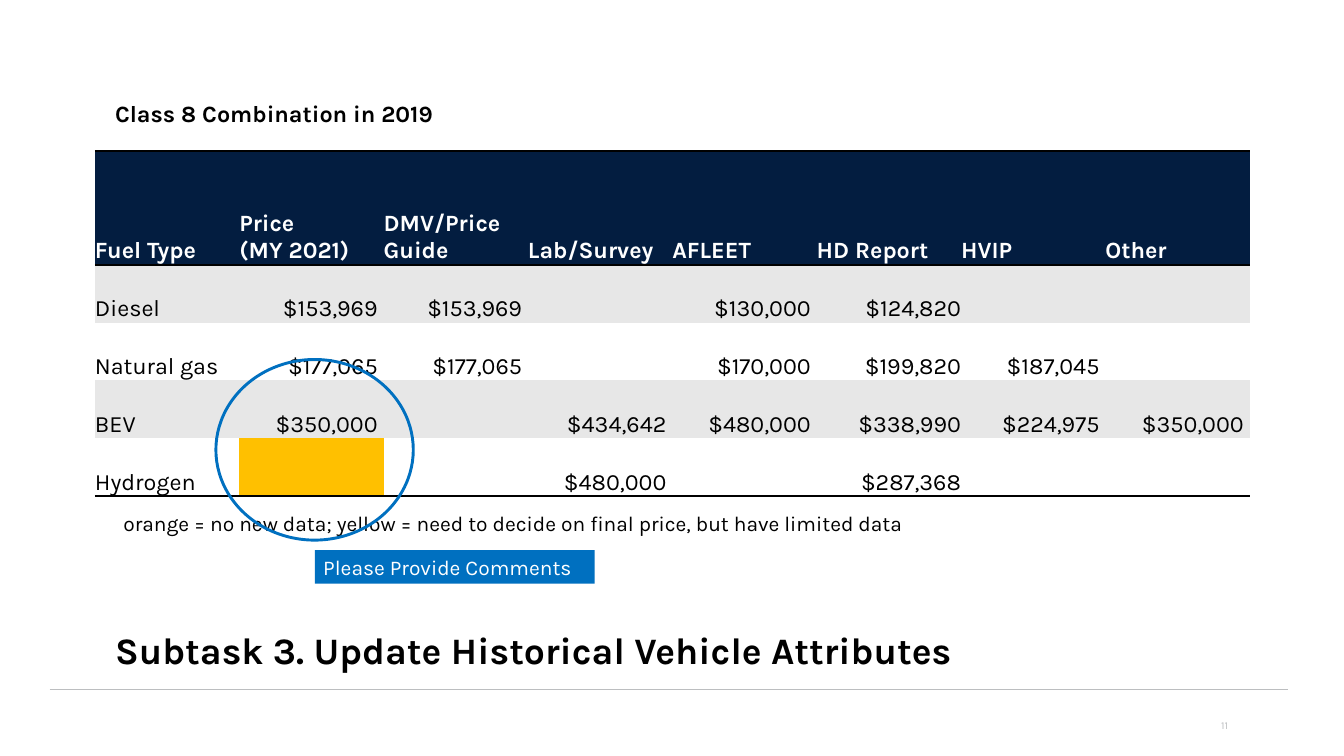
import pptx
import pptx.util
from pptx.dml.color import RGBColor
from pptx.enum.shapes import MSO_CONNECTOR, MSO_SHAPE
from pptx.enum.text import MSO_ANCHOR, PP_ALIGN
from pptx.oxml import parse_xml
from pptx.oxml.ns import nsdecls, qn

WIDTH, HEIGHT = pptx.util.Inches(16), pptx.util.Inches(9)
COL, ROW = WIDTH // 16, HEIGHT // 9
LEFT, CONTENT_W = 1.37, 13.75
FONT = "Karla"
NO_STYLE_NO_GRID = "{2D5ABB26-0587-4C30-8999-92F81FD0307C}"

BLACK = RGBColor(0x00, 0x00, 0x00)
WHITE = RGBColor(0xFF, 0xFF, 0xFF)
NAVY = RGBColor(0x03, 0x1D, 0x40)
BAND = RGBColor(0xE7, 0xE7, 0xE7)
AMBER = RGBColor(0xFF, 0xC0, 0x00)
BLUE = RGBColor(0x00, 0x70, 0xC0)
SILVER = RGBColor(0xBC, 0xBE, 0xC0)

HEADERS = ["Fuel Type", "Price\n(MY 2021)", "DMV/Price Guide", "Lab/Survey",
           "AFLEET", "HD Report", "HVIP", "Other"]
FLUSH_COLUMN = HEADERS.index("HD Report")
PRICES = [
    ["Diesel", "$153,969", "$153,969", "", "$130,000", "$124,820", "", ""],
    ["Natural gas", "$177,065", "$177,065", "", "$170,000", "$199,820", "$187,045", ""],
    ["BEV", "$350,000", "", "$434,642", "$480,000", "$338,990", "$224,975", "$350,000"],
    ["Hydrogen", "", "", "$480,000", "", "$287,368", "", ""],
]
UNDECIDED = (len(PRICES), 1)


def grid(*cells):
    """Turn left, top, width, height in grid columns and rows into lengths."""
    return [round(n * unit) for n, unit in zip(cells, (COL, ROW, COL, ROW))]


def write(tf, text, size, color=BLACK, bold=False, align=PP_ALIGN.LEFT, spacing=None):
    tf.word_wrap = True
    for i, line in enumerate(text.split("\n")):
        p = tf.add_paragraph() if i else tf.paragraphs[0]
        p.alignment = align
        if spacing:
            p.line_spacing = spacing
        r = p.add_run()
        r.text = line
        r.font.name, r.font.size, r.font.bold = FONT, pptx.util.Pt(size), bold
        r.font.color.rgb = color


def set_title(s, text):
    title = s.shapes.title
    title.left, title.top, title.width, title.height = grid(LEFT, 6.98, CONTENT_W, 1.08)
    tf = title.text_frame
    tf.margin_left = tf.margin_right = 0
    tf.vertical_anchor = MSO_ANCHOR.BOTTOM
    write(tf, text, 32, bold=True, spacing=0.9)


def add_text(s, cells, text, size, inset=0.1, anchor=MSO_ANCHOR.TOP, **style):
    tf = s.shapes.add_textbox(*grid(*cells)).text_frame
    tf.margin_left = tf.margin_right = pptx.util.Inches(inset)
    tf.vertical_anchor = anchor
    write(tf, text, size, **style)


def add_shape(s, kind, cells, fill=None, line=None):
    sp = s.shapes.add_shape(kind, *grid(*cells))
    sp.shadow.inherit = False
    if fill is None:
        sp.fill.background()
    else:
        sp.fill.solid()
        sp.fill.fore_color.rgb = fill
    if line is None:
        sp.line.fill.background()
    else:
        sp.line.color.rgb = line
        sp.line.width = pptx.util.Pt(2.5)
    return sp


def add_rule(s, x1, x2, y):
    c = s.shapes.add_connector(MSO_CONNECTOR.STRAIGHT, *grid(x1, y, x2, y))
    c.line.color.rgb = SILVER
    c.line.width = pptx.util.Pt(0.5)
    c._element.spPr.append(parse_xml(f"<a:effectLst {nsdecls('a')}/>"))


def add_border(cell, side):
    """Draw a 2 pt black border on side T or B; call before filling the cell."""
    cell._tc.get_or_add_tcPr().append(parse_xml(
        f'<a:ln{side} {nsdecls("a")} w="{pptx.util.Pt(2)}"><a:solidFill>'
        f'<a:srgbClr val="{BLACK}"/></a:solidFill></a:ln{side}>'))


def format_cell(cell, row, col, text):
    header = row == 0
    if header:
        add_border(cell, "T")
    if header or row == len(PRICES):
        add_border(cell, "B")
    cell.fill.solid()
    if (row, col) == UNDECIDED:
        cell.fill.fore_color.rgb = AMBER
    else:
        cell.fill.fore_color.rgb = NAVY if header else BAND if row % 2 else WHITE
    cell.vertical_anchor = MSO_ANCHOR.BOTTOM
    cell.margin_left = cell.margin_right = cell.margin_top = cell.margin_bottom = 0
    is_price = not header and col > 0
    if is_price and col != FLUSH_COLUMN:
        cell.margin_right = pptx.util.Inches(0.07)
    if text:
        write(cell.text_frame, text, 20, WHITE if header else BLACK, header,
              PP_ALIGN.RIGHT if is_price else PP_ALIGN.LEFT)


def add_price_table(s):
    rows = [HEADERS] + PRICES
    table = s.shapes.add_table(len(rows), len(HEADERS),
                               *grid(1.13, 1.8, CONTENT_W, 4.1)).table
    table.first_row = table.horz_banding = False
    table._tbl.tblPr.find(qn("a:tableStyleId")).text = NO_STYLE_NO_GRID
    for i, row in enumerate(rows):
        table.rows[i].height = round(ROW * (0.69 if i else 1.35))
        for j, text in enumerate(row):
            format_cell(table.cell(i, j), i, j, text)


def main():
    prs = pptx.Presentation()
    prs.slide_width, prs.slide_height = WIDTH, HEIGHT
    s = prs.slides.add_slide(prs.slide_layouts[5])

    add_rule(s, 0.59, 15.33, 8.2)
    set_title(s, "Subtask 3. Update Historical Vehicle Attributes")
    add_text(s, (11.56, 8.39, 3.16, 0.48), "11", 9, anchor=MSO_ANCHOR.MIDDLE,
             color=SILVER, align=PP_ALIGN.RIGHT)
    add_text(s, (LEFT, 1.1, CONTENT_W, 0.5), "Class 8 Combination in 2019", 20,
             inset=0, bold=True, spacing=1.1)
    add_price_table(s)
    add_text(s, (LEFT, 6.03, 11.89, 0.4),
             "orange = no new data; yellow = need to decide on final price, "
             "but have limited data", 18)
    add_shape(s, MSO_SHAPE.OVAL, (2.57, 4.28, 2.35, 2.15), line=BLUE)
    label = add_shape(s, MSO_SHAPE.RECTANGLE, (3.75, 6.55, 3.33, 0.4), fill=BLUE)
    label.text_frame.vertical_anchor = MSO_ANCHOR.TOP
    write(label.text_frame, "Please Provide Comments", 18, WHITE)

    prs.save("out.pptx")


if __name__ == "__main__":
    main()
